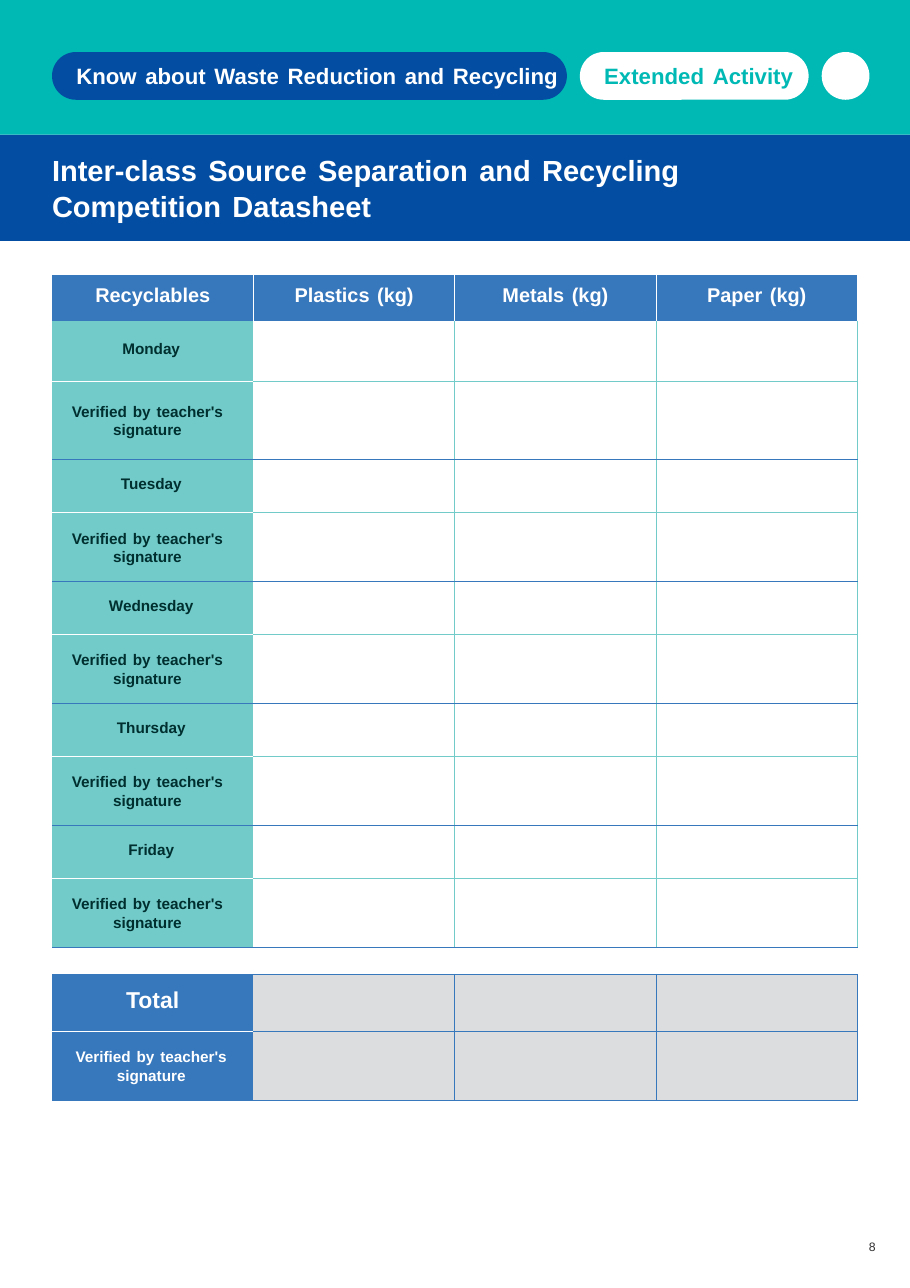
from dataclasses import dataclass

from lxml import etree
from pptx import Presentation
from pptx.dml.color import RGBColor
from pptx.enum.shapes import MSO_SHAPE
from pptx.enum.text import MSO_ANCHOR, MSO_AUTO_SIZE, PP_ALIGN
from pptx.oxml.ns import qn
from pptx.util import Pt

LEFT, CENTER = PP_ALIGN.LEFT, PP_ALIGN.CENTER
TOP, MIDDLE = MSO_ANCHOR.TOP, MSO_ANCHOR.MIDDLE
RECTANGLE, PILL, CIRCLE = MSO_SHAPE.RECTANGLE, MSO_SHAPE.ROUNDED_RECTANGLE, MSO_SHAPE.OVAL
PLAIN_TABLE_STYLE = "{2D5ABB26-0587-4C30-8999-92F81FD0307C}"
PAGE_WIDTH, PAGE_HEIGHT = 594.72, 841.68


@dataclass(frozen=True)
class Theme:
    font: str = "Arial"
    teal: str = "00B9B5"
    navy: str = "034EA2"
    blue: str = "3777BC"
    mint: str = "72CBC9"
    grey: str = "DCDDDE"
    white: str = "FFFFFF"
    label_ink: str = "002F2F"
    number_ink: str = "323031"
    title: float = 19
    total: float = 15
    banner: float = 14.5
    heading: float = 13
    label: float = 10
    number: float = 8
    border: float = 0.75
    word_gap: float = 0.11


THEME = Theme()


def write(frame, text, size, color, align=LEFT, bold=True):
    """Write one paragraph with slightly widened gaps between words."""
    para = frame.paragraphs[0]
    para.alignment = align
    font = para.font
    font.name, font.size, font.bold = THEME.font, Pt(size), bold
    font.color.rgb = RGBColor.from_string(color)
    for index, word in enumerate(text.split()):
        if index:
            space = para.add_run()
            space.text = " "
            space.font._element.set("spc", str(round(size * THEME.word_gap * 100)))
        para.add_run().text = word
    return para


def set_margins(target, left=0, top=0, right=0, bottom=0):
    target.margin_left, target.margin_top = Pt(left), Pt(top)
    target.margin_right, target.margin_bottom = Pt(right), Pt(bottom)


def paint(shape, color):
    shape.fill.solid()
    shape.fill.fore_color.rgb = RGBColor.from_string(color)


def add_block(page, kind, box, color):
    shape = page.shapes.add_shape(kind, *map(Pt, box))
    shape.shadow.inherit = False
    paint(shape, color)
    shape.line.fill.background()
    return shape


# Teal banner with two labels and an empty disc
def build_banner(page, box):
    left, top, width, height = box
    add_block(page, RECTANGLE, box, THEME.teal)
    pill_height, gap = 31.2, 8.5
    x, y = left + 34, top + 34
    pills = [
        ("Know about Waste Reduction and Recycling", 336.5, THEME.navy, THEME.white),
        ("Extended Activity", 149.5, THEME.white, THEME.teal),
    ]
    for text, pill_width, fill, ink in pills:
        pill = add_block(page, PILL, (x, y, pill_width, pill_height), fill)
        pill.adjustments[0] = 0.5
        frame = pill.text_frame
        frame.word_wrap = False
        frame.vertical_anchor = MIDDLE
        set_margins(frame, left=11.3, bottom=0.5)
        write(frame, text, THEME.banner, ink)
        x += pill_width + gap
    add_block(page, CIRCLE, (x, y, pill_height, pill_height), THEME.white)


# Navy title band
def build_title(page, box):
    title = page.shapes.title
    title.left, title.top, title.width, title.height = map(Pt, box)
    paint(title, THEME.navy)
    frame = title.text_frame
    frame.auto_size = MSO_AUTO_SIZE.NONE
    frame.word_wrap = True
    frame.vertical_anchor = TOP
    set_margins(frame, left=34, top=11.3, right=130)
    para = write(frame, "Inter-class Source Separation and Recycling Competition Datasheet",
                 THEME.title, THEME.white)
    para.line_spacing = 1.02
    para.space_before = Pt(0)


def set_borders(cell, **colors):
    properties = cell._tc.get_or_add_tcPr()
    for side in "LRTB":
        if colors.get(side):
            line = etree.SubElement(properties, qn(f"a:ln{side}"), w=str(Pt(THEME.border)))
            fill = etree.SubElement(line, qn("a:solidFill"))
            etree.SubElement(fill, qn("a:srgbClr"), val=colors[side])


def fill_cell(cell, text, size, ink, fill, **margins):
    cell.vertical_anchor = MIDDLE
    set_margins(cell, **margins)
    if text:
        para = write(cell.text_frame, text, size, ink, CENTER)
        if size == THEME.label:
            para.line_spacing = Pt(12)
    else:
        end = etree.SubElement(cell.text_frame.paragraphs[0]._p, qn("a:endParaRPr"))
        end.set("sz", str(THEME.number * 100))
    if fill:
        paint(cell, fill)
    else:
        cell.fill.background()


def build_row(table, row, label, size, ink, fills, side, tops, bottoms, **margins):
    """Fill a label cell and its entry cells; pairs give label and entry colours."""
    last = len(table.columns) - 1
    for column in range(last + 1):
        entry = int(column > 0)
        set_borders(table.cell(row, column), T=tops[entry], B=bottoms[entry],
                    L=side if column > 1 else None, R=side if entry else None)
        if entry:
            fill_cell(table.cell(row, column), "", size, ink, fills[1])
        else:
            fill_cell(table.cell(row, column), label, size, ink, fills[0], **margins)


# Weekly datasheet with totals
def build_datasheet(page, box):
    headings = ["Recyclables", "Plastics (kg)", "Metals (kg)", "Paper (kg)"]
    days = ["Monday", "Tuesday", "Wednesday", "Thursday", "Friday"]
    verified = "Verified by teacher's signature"
    heights = [30, 40, 51] + [34.7, 45] * (len(days) - 1) + [17.6, 37.2, 45.5]
    graphic = page.shapes.add_table(len(heights), len(headings), *map(Pt, box))
    table = graphic.table
    table.first_row = table.horz_banding = False
    table._tbl.tblPr.find(qn("a:tableStyleId")).text = PLAIN_TABLE_STYLE
    for column in table.columns:
        column.width = Pt(box[2] / len(headings))
    for row, height in zip(table.rows, heights):
        row.height = Pt(height)

    # Heading row
    for column, heading in enumerate(headings):
        cell = table.cell(0, column)
        set_borders(cell, L=THEME.white if column else None,
                    R=THEME.white if column < len(headings) - 1 else None)
        fill_cell(cell, heading, THEME.heading, THEME.white, THEME.blue, bottom=2)

    # Two rows for each day
    blue, mint = (THEME.blue, THEME.blue), (THEME.mint, None)
    middle = (THEME.white, THEME.mint)
    for index, day in enumerate(days):
        row = 1 + 2 * index
        build_row(table, row, day, THEME.label, THEME.label_ink, mint, THEME.mint,
                  blue if index else (None, None), middle, right=2, bottom=3)
        build_row(table, row + 1, verified, THEME.label, THEME.label_ink, mint,
                  THEME.mint, middle, blue, right=7)

    # Spacer and totals
    spacer = 1 + 2 * len(days)
    build_row(table, spacer, "", THEME.label, THEME.label_ink, (None, None), None, blue, blue)
    table.cell(spacer, 0).merge(table.cell(spacer, len(headings) - 1))
    totals, divider = (THEME.blue, THEME.grey), (THEME.white, THEME.blue)
    build_row(table, spacer + 1, "Total", THEME.total, THEME.white, totals, THEME.blue,
              blue, divider, bottom=3)
    build_row(table, spacer + 2, verified, THEME.label, THEME.white, totals, THEME.blue,
              divider, (None, THEME.blue), right=2)


# Page number
def build_page_number(page, box):
    frame = page.shapes.add_textbox(*map(Pt, box)).text_frame
    frame.word_wrap = True
    set_margins(frame, left=2.7)
    write(frame, "8", THEME.number, THEME.number_ink, bold=False)


def main():
    deck = Presentation()
    deck.slide_width, deck.slide_height = Pt(PAGE_WIDTH), Pt(PAGE_HEIGHT)
    page = deck.slides.add_slide(deck.slide_layouts[5])
    build_banner(page, (0, 0, PAGE_WIDTH, 88))
    build_title(page, (0, 88, PAGE_WIDTH, 69.5))
    build_datasheet(page, (34, 179.5, 526.4, 540))
    build_page_number(page, (565.2, 810, 16.5, 10))
    deck.save("out.pptx")


if __name__ == "__main__":
    main()
